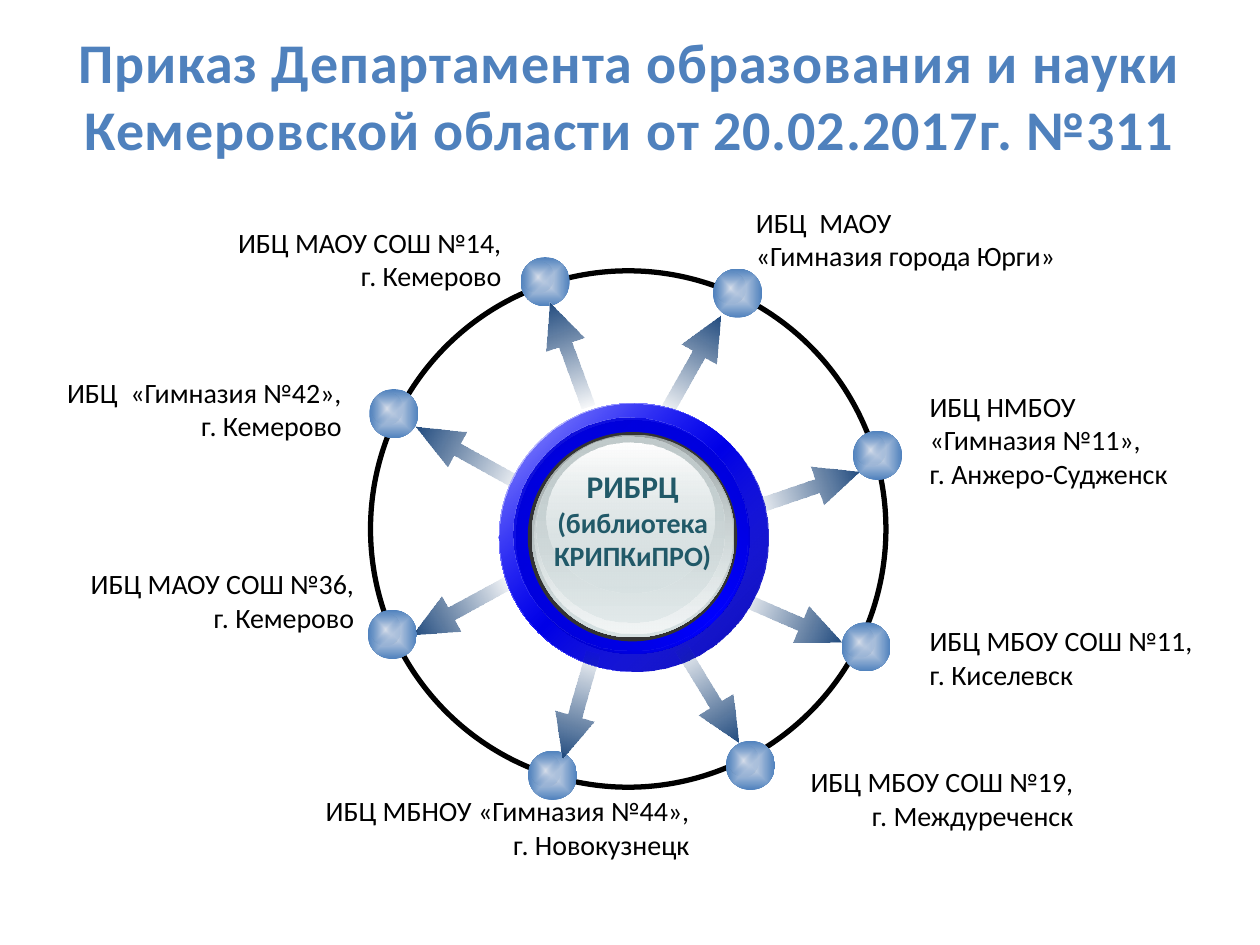
from dataclasses import dataclass
from typing import NamedTuple

from pptx import Presentation
from pptx.dml.color import RGBColor
from pptx.enum.shapes import MSO_SHAPE
from pptx.enum.text import MSO_ANCHOR, MSO_AUTO_SIZE, PP_ALIGN
from pptx.oxml import parse_xml
from pptx.oxml.ns import nsdecls, qn
from pptx.util import Cm, Pt


class Gradient(NamedTuple):
    stops: tuple  # (position %, colour, opacity %)
    angle: int | None = 0  # None: from the centre outwards


@dataclass(frozen=True)
class Theme:
    font: str = "Calibri"
    title_size: int = 32
    hub_size: int = 18
    label_size: int = 16
    title: str = "4F81BD"
    hub: str = "215968"
    ink: str = "000000"
    rim: str = "333333"
    arrow: Gradient = Gradient(((0, "1D4577", 0), (100, "1F497D", 100)))
    node: Gradient = Gradient(((0, "D8DFEB", 100), (100, "4F81BD", 100)), None)
    glow: Gradient = Gradient(((0, "D8DFEB", 100), (100, "4F81BD", 0)), None)


THEME = Theme()
L, C, R = PP_ALIGN.LEFT, PP_ALIGN.CENTER, PP_ALIGN.RIGHT


class SlideBuilder:
    def __init__(self, slide, theme):
        self.s, self.theme = slide, theme

    def fill(self, sp, paint):
        if isinstance(paint, str):
            sp.fill.solid()
            sp.fill.fore_color.rgb = RGBColor.from_string(paint)
            return
        stops = "".join(
            f'<a:gs pos="{pos * 1000}"><a:srgbClr val="{color}">'
            f'<a:alpha val="{alpha * 1000}"/></a:srgbClr></a:gs>'
            for pos, color, alpha in paint.stops)
        if paint.angle is None:
            direction = ('<a:path path="shape"><a:fillToRect l="50000" t="50000" '
                         'r="50000" b="50000"/></a:path>')
        else:
            direction = f'<a:lin ang="{paint.angle * 60000}" scaled="0"/>'
        sp.fill.gradient()
        old = sp._element.spPr.find(qn("a:gradFill"))
        old.getparent().replace(old, parse_xml(
            f'<a:gradFill {nsdecls("a")} rotWithShape="1">'
            f'<a:gsLst>{stops}</a:gsLst>{direction}</a:gradFill>'))

    def shape(self, kind, box, paint):
        sp = self.s.shapes.add_shape(kind, *map(Cm, box))
        sp.shadow.inherit = False
        sp.line.fill.background()
        self.fill(sp, paint)
        return sp

    def ellipse(self, box, paint):
        return self.shape(MSO_SHAPE.OVAL, box, paint)

    def ring(self, box, width):
        sp = self.ellipse(box, self.theme.ink)
        sp.fill.background()
        sp.line.color.rgb = RGBColor.from_string(self.theme.ink)
        sp.line.width = Pt(width)

    def arrow(self, center, angle, length=2.21, height=0.81):
        x, y = center
        box = (x - length / 2, y - height / 2, length, height)
        sp = self.shape(MSO_SHAPE.RIGHT_ARROW, box, self.theme.arrow)
        sp.adjustments[0] = 0.35
        sp.adjustments[1] = 0.45 * length / height * 0.9
        sp.rotation = angle

    def node(self, center, size=0.99):
        x, y = (v - size / 2 for v in center)
        self.ellipse((x, y, size, size), self.theme.node)
        self.ellipse((x + 0.05, y + 0.08, 0.61, 0.63), self.theme.glow)

    def format(self, p, text, align, **values):
        p.alignment = align
        r = p.add_run()
        r.text = text
        color = values.pop("color")
        for name, value in {"name": self.theme.font, **values}.items():
            setattr(r.font, name, value)
        r.font.color.rgb = RGBColor.from_string(color)
        return r

    def text(self, box, lines, align, color, sizes, bold=False):
        tf = self.s.shapes.add_textbox(*map(Cm, box)).text_frame
        tf.word_wrap = False
        tf.auto_size = MSO_AUTO_SIZE.SHAPE_TO_FIT_TEXT
        for i, (line, size) in enumerate(zip(lines, sizes)):
            p = tf.add_paragraph() if i else tf.paragraphs[0]
            self.format(p, line, align, size=Pt(size), bold=bold, color=color)

    def label(self, left, top, width, align, lines):
        height = 0.25 + 0.69 * len(lines)
        self.text((left, top, width, height), lines, align, self.theme.ink,
                  [self.theme.label_size] * len(lines))

    def title(self, box, text):
        sp = self.s.shapes.title
        sp.left, sp.top, sp.width, sp.height = map(Cm, box)
        tf = sp.text_frame
        frame = {"word_wrap": True, "auto_size": MSO_AUTO_SIZE.NONE,
                 "vertical_anchor": MSO_ANCHOR.MIDDLE}
        for name, value in frame.items():
            setattr(tf, name, value)
        r = self.format(tf.paragraphs[0], text, C, size=Pt(self.theme.title_size),
                        bold=True, color=self.theme.title)
        r.font._element.set("spc", "50")


# Arrows: centre, angle, optional length
BACK_ARROWS = [
    ((13.98, 7.32), 299.6), ((15.94, 12.5), 23.6), ((9.28, 12.27), 151.4),
    ((16.27, 9.86), 341.3), ((9.42, 9.17), 208.8, 2.39),
]
FRONT_ARROWS = [((11.65, 14.22), 106), ((14.31, 14.02), 58.6), ((11.47, 7.14), 249.9)]

# Library centres: node centre, label left, top, width, alignment, lines
CENTERS = [
    ((14.87, 5.91), 14.99, 4.01, 7.16, L, ["ИБЦ  МАОУ", "«Гимназия города Юрги»"]),
    ((17.69, 9.18), 18.49, 7.72, 5.74, L,
     ["ИБЦ НМБОУ", "«Гимназия №11»,", "г. Анжеро-Судженск"]),
    ((17.46, 13.04), 18.49, 12.45, 6.55, L, ["ИБЦ МБОУ СОШ №11,", "г. Киселевск"]),
    ((15.13, 15.43), 15.29, 15.29, 6.6, R, ["ИБЦ МБОУ СОШ №19,", "г. Междуреченск"]),
    ((11.14, 15.63), 5.36, 15.88, 8.79, R,
     ["ИБЦ МБНОУ «Гимназия №44»,", "г. Новокузнецк"]),
    ((7.91, 12.79), 0.79, 11.3, 6.6, R, ["ИБЦ МАОУ СОШ №36,", "г. Кемерово"]),
    ((7.94, 8.34), 0.41, 7.44, 6.73, R, ["ИБЦ  «Гимназия №42»,", "г. Кемерово"]),
    ((10.99, 5.68), 3.76, 4.42, 6.6, R, ["ИБЦ МАОУ СОШ №14,", "г. Кемерово"]),
]

# Hub discs from back to front: box, paint
HUB = [
    ((10.06, 8.13, 5.41, 5.41),
     Gradient(((0, "FFFFFF", 100), (50, "0000FF", 100), (100, "FFFFFF", 100)), 45)),
    ((10.08, 8.13, 5.41, 5.41), Gradient(((0, "0000FF", 32), (100, "0000B6", 100)), 45)),
    ((10.41, 8.48, 4.7, 4.7),
     Gradient(((0, "0000C3", 100), (50, "0000FF", 100), (100, "0000C3", 100)), 315)),
    ((10.36, 8.41, 4.7, 4.7), Gradient(((0, "0000D1", 100), (100, "0000FF", 0)), 45)),
    ((10.64, 8.71, 4.22, 4.22), THEME.rim),
    ((10.72, 8.76, 4.09, 4.09), Gradient(((0, "99A1A2", 100), (100, "D6E1E2", 100)), 90)),
    ((10.77, 8.79, 3.99, 3.99), Gradient(((0, "D6E1E2", 0), (100, "F2F5F5", 100)), 90)),
    ((10.82, 8.81, 3.78, 3.73), Gradient(((0, "C1CBCC", 100), (100, "D6E1E2", 48)), 90)),
    ((11.02, 8.92, 3.38, 3.02), Gradient(((0, "FFFFFF", 100), (100, "D6E1E2", 38)), 90)),
]


def main():
    prs = Presentation()
    prs.slide_width, prs.slide_height = Cm(25.4), Cm(19.05)
    b = SlideBuilder(prs.slides.add_slide(prs.slide_layouts[5]), THEME)

    b.title((1.19, 0.41, 23.01, 3),
            "Приказ Департамента образования и науки "
            "Кемеровской области от 20.02.2017г. №311")

    # Arrows behind the ring, then the ring and its nodes
    for arrow in BACK_ARROWS:
        b.arrow(*arrow)
    b.ring((7.47, 5.46, 10.39, 10.41), 3)
    for center, *_ in CENTERS:
        b.node(center)

    # Hub
    for box, paint in HUB:
        b.ellipse(box, paint)
    b.text((10.67, 9.3, 4.17, 2.39), ["РИБРЦ", "(библиотека", "КРИПКиПРО)"], C,
           THEME.hub, [THEME.hub_size, THEME.label_size, THEME.label_size], bold=True)

    # Labels and the arrows in front
    for _, *label in CENTERS:
        b.label(*label)
    for arrow in FRONT_ARROWS:
        b.arrow(*arrow)

    prs.save("out.pptx")


if __name__ == "__main__":
    main()
